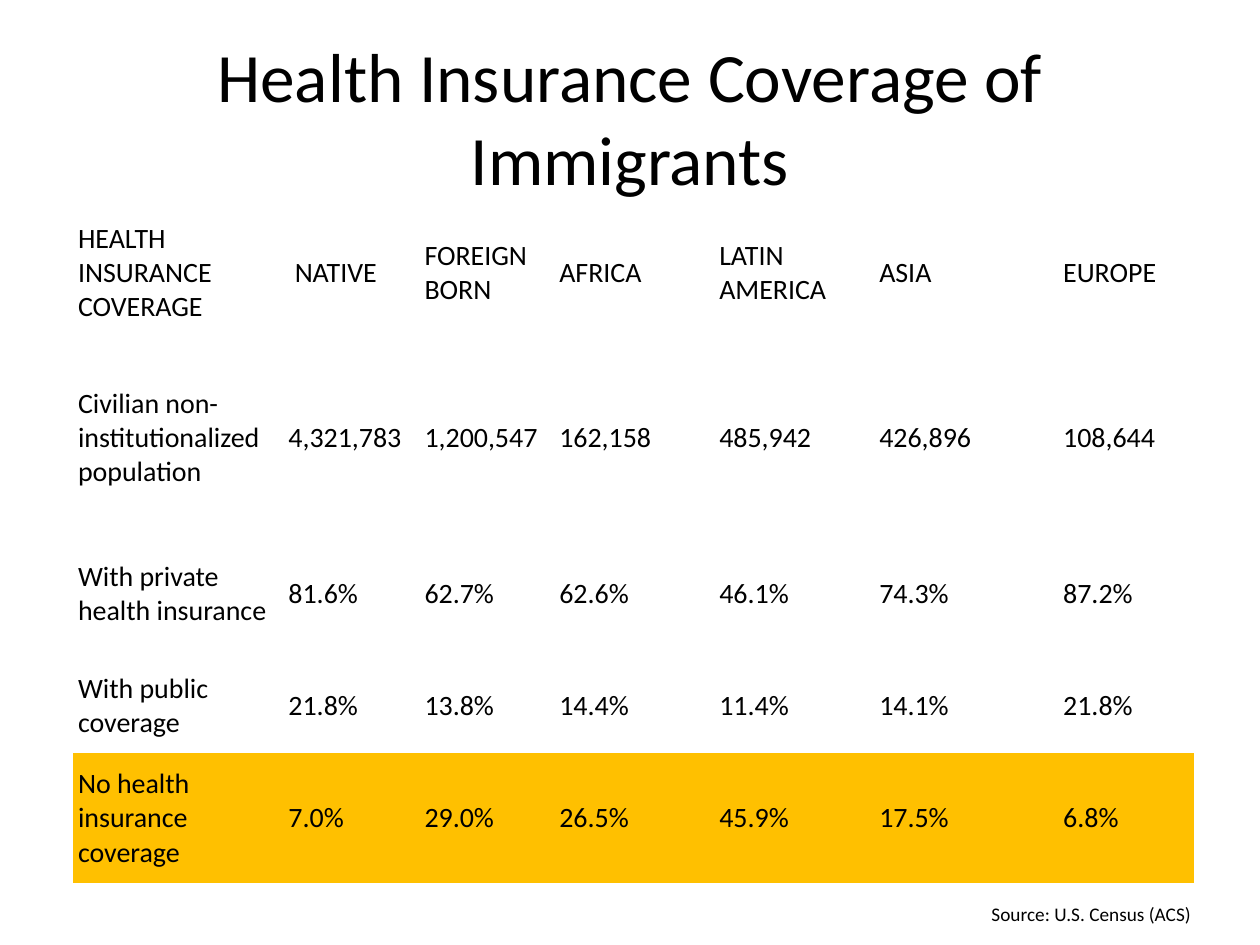
from pptx import Presentation
from pptx.dml.color import RGBColor
from pptx.enum.text import MSO_ANCHOR, PP_ALIGN
from pptx.oxml.ns import qn
from pptx.util import Inches, Pt

BLACK = RGBColor(0x00, 0x00, 0x00)
GOLD = RGBColor(0xFF, 0xC0, 0x00)
LEFT, CENTER = PP_ALIGN.LEFT, PP_ALIGN.CENTER
TOP, MIDDLE = MSO_ANCHOR.TOP, MSO_ANCHOR.MIDDLE
NO_GRID = "{2D5ABB26-0587-4C30-8999-92F81FD0307C}"


def put_text(frame, text, size=16, align=LEFT, anchor=MIDDLE):
    frame.word_wrap = True
    frame.vertical_anchor = anchor
    para = frame.paragraphs[0]
    para.alignment = align
    run = para.add_run()
    run.text = text
    run.font.name = "Calibri"
    run.font.size = Pt(size)
    run.font.color.rgb = BLACK


deck = Presentation()
deck.slide_width, deck.slide_height = Inches(10), Inches(7.5)
slide = deck.slides.add_slide(deck.slide_layouts[6])

# Title
title = slide.shapes.add_textbox(Inches(0.5), Inches(0.3), Inches(9), Inches(1.25))
put_text(title.text_frame, "Health Insurance Coverage of Immigrants",
         size=39.6, align=CENTER)

# Coverage table
rows = [
    ["HEALTH INSURANCE COVERAGE", " NATIVE", "FOREIGN BORN", "AFRICA",
     "LATIN AMERICA", "ASIA", "EUROPE"],
    ["Civilian non-institutionalized population", "4,321,783", "1,200,547",
     "162,158", "485,942", "426,896", "108,644"],
    ["With private health insurance", "81.6%", "62.7%", "62.6%", "46.1%",
     "74.3%", "87.2%"],
    ["With public coverage", "21.8%", "13.8%", "14.4%", "11.4%", "14.1%", "21.8%"],
    ["No health insurance coverage", "7.0%", "29.0%", "26.5%", "45.9%",
     "17.5%", "6.8%"],
]
widths = [1.67, 1.08, 1.07, 1.27, 1.27, 1.46, 1.08]
heights = [1.17, 1.45, 1.03, 0.75, 1.03]

grid = slide.shapes.add_table(len(rows), len(widths), Inches(0.58), Inches(1.58),
                              Inches(8.92), Inches(5.42))
table = grid.table
table.first_row = table.horz_banding = False
for style in grid.element.iter(qn("a:tableStyleId")):
    style.text = NO_GRID
for col, width in zip(table.columns, widths):
    col.width = Inches(width)

for r, (row, height) in enumerate(zip(rows, heights)):
    table.rows[r].height = Inches(height)
    for c, text in enumerate(row):
        cell = table.cell(r, c)
        cell.margin_left = cell.margin_right = Inches(0.04)
        cell.margin_top = cell.margin_bottom = Inches(0.02)
        cell.vertical_anchor = MIDDLE
        put_text(cell.text_frame, text)
        # The last row stands out
        if r == len(rows) - 1:
            cell.fill.solid()
            cell.fill.fore_color.rgb = GOLD
        else:
            cell.fill.background()

# Source note
note = slide.shapes.add_textbox(Inches(7.77), Inches(7.11), Inches(2.08), Inches(0.29))
put_text(note.text_frame, "Source: U.S. Census (ACS)", size=11, anchor=TOP)

deck.save("out.pptx")
